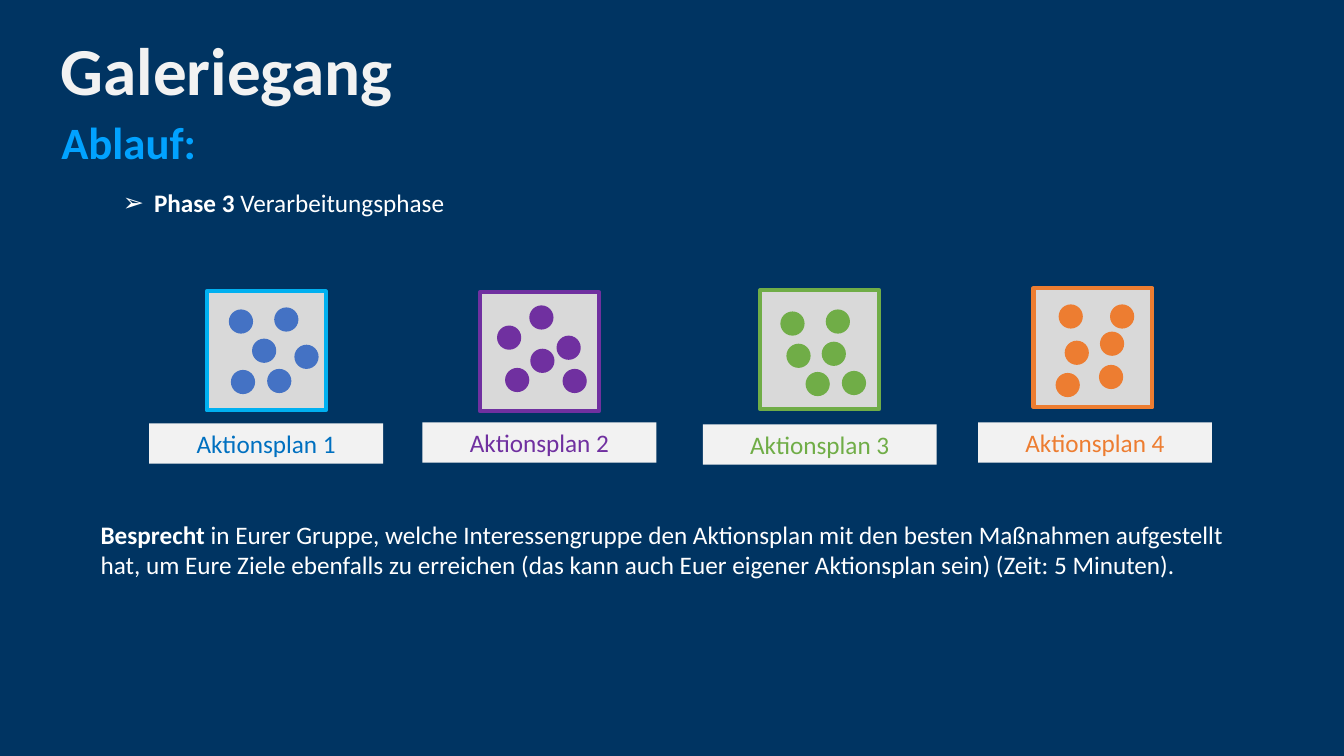
from lxml import etree
from pptx import Presentation
from pptx.dml.color import RGBColor
from pptx.enum.shapes import MSO_SHAPE as Shape
from pptx.enum.text import MSO_ANCHOR as Anchor, MSO_AUTO_SIZE as AutoSize, PP_ALIGN as Align
from pptx.oxml.ns import qn
from pptx.util import Inches, Pt

WHITE, OFF_WHITE, GREY = "FFFFFF", "F2F2F2", "D9D9D9"
BOARD, DOT = 1.18, 0.24
LABEL_WIDTH, LABEL_HEIGHT = 2.32, 0.4


def rgb(color):
    return RGBColor.from_string(color)


def write(frame, parts, size, color, align=Align.LEFT):
    """Fill the frame with one paragraph of (text, bold) parts."""
    frame.word_wrap = True
    paragraph = frame.paragraphs[0]
    paragraph.alignment = align
    for text, bold in parts:
        run = paragraph.add_run()
        run.text = text
        run.font.name = "Calibri"
        run.font.size = Pt(size)
        run.font.bold = bold
        run.font.color.rgb = rgb(color)
    return paragraph


prs = Presentation()
prs.slide_width, prs.slide_height = Inches(13.33), Inches(7.5)
slide = prs.slides.add_slide(prs.slide_layouts[5])
slide.background.fill.solid()
slide.background.fill.fore_color.rgb = rgb("003462")

# Headings
title = slide.shapes.title
title.left, title.top = Inches(0.23), Inches(-0.16)
title.width, title.height = Inches(4.04), Inches(1.3)
title.text_frame.vertical_anchor = Anchor.BOTTOM
title.text_frame.auto_size = AutoSize.NONE
heading = write(title.text_frame, [("Galeriegang", True)], 48, OFF_WHITE, Align.CENTER)
heading.line_spacing = 0.9

subtitle = slide.shapes.add_textbox(Inches(0.51), Inches(1.19), Inches(2.73), Inches(0.57))
subheading = write(subtitle.text_frame, [("Ablauf:", True)], 32, "01A2FF")
subheading.line_spacing = 0.8
subheading.space_before = Pt(10)

# Action plans: accent, dot colour, label colour, board corner, label corner, dot corners
plans = [
    ("00B0F0", "4472C4", "0070C0", (2.05, 2.89), (1.48, 4.2),
     [(2.72, 3.05), (2.92, 3.42), (2.27, 3.07), (2.5, 3.36), (2.29, 3.67), (2.65, 3.66)]),
    ("7030A0", "7030A0", "7030A0", (4.76, 2.9), (4.19, 4.19),
     [(5.25, 3.03), (5.58, 3.66), (4.93, 3.23), (5.26, 3.46), (5.01, 3.65), (5.52, 3.33)]),
    ("70AD47", "70AD47", "70AD47", (7.54, 2.88), (6.97, 4.21),
     [(8.19, 3.07), (8.35, 3.68), (7.74, 3.09), (8.15, 3.39), (7.99, 3.69), (7.8, 3.41)]),
    ("ED7D31", "ED7D31", "ED7D31", (10.25, 2.86), (9.7, 4.19),
     [(10.5, 3.02), (10.56, 3.38), (11.01, 3.02), (10.91, 3.29), (10.9, 3.62), (10.47, 3.7)]),
]
for number, (accent, dot_color, label_color, board_at, label_at, dots) in enumerate(plans, 1):
    plan = slide.shapes.add_group_shape()
    pieces = [(Shape.RECTANGLE, board_at, BOARD, BOARD, GREY)]
    pieces += [(Shape.OVAL, dot_at, DOT, DOT, dot_color) for dot_at in dots]
    pieces.append((Shape.RECTANGLE, label_at, LABEL_WIDTH, LABEL_HEIGHT, OFF_WHITE))
    for kind, (left, top), width, height, fill in pieces:
        piece = plan.shapes.add_shape(kind, Inches(left), Inches(top), Inches(width), Inches(height))
        piece.shadow.inherit = False
        piece.fill.solid()
        piece.fill.fore_color.rgb = rgb(fill)
        piece.line.fill.background()

    board, label = plan.shapes[0], plan.shapes[-1]
    board.line.color.rgb = rgb(accent)
    board.line.width = Pt(3)
    label.text_frame.vertical_anchor = Anchor.MIDDLE
    write(label.text_frame, [(f"Aktionsplan {number}", False)], 18, label_color, Align.CENTER)

# Phase and task
phase = slide.shapes.add_textbox(Inches(0.62), Inches(1.81), Inches(11.92), Inches(0.4))
phase_line = write(phase.text_frame, [("Phase 3 ", True), ("Verarbeitungsphase", False)], 18, WHITE)
phase_line.level = 1
properties = phase_line._p.get_or_add_pPr()
properties.set("marL", str(Inches(0.81)))
properties.set("indent", str(Inches(-0.31)))
etree.SubElement(properties, qn("a:buFont")).set("typeface", "Arial")
etree.SubElement(properties, qn("a:buChar")).set("char", "➢")

task = slide.shapes.add_textbox(Inches(0.9), Inches(5.1), Inches(11.53), Inches(0.71))
write(task.text_frame, [
    ("Besprecht ", True),
    ("in Eurer Gruppe, welche Interessengruppe den Aktionsplan mit den besten Maßnahmen "
     "aufgestellt hat, um Eure Ziele ebenfalls zu erreichen (das kann auch Euer eigener "
     "Aktionsplan sein) (Zeit: 5 Minuten).", False),
], 18, WHITE)

prs.save("out.pptx")
